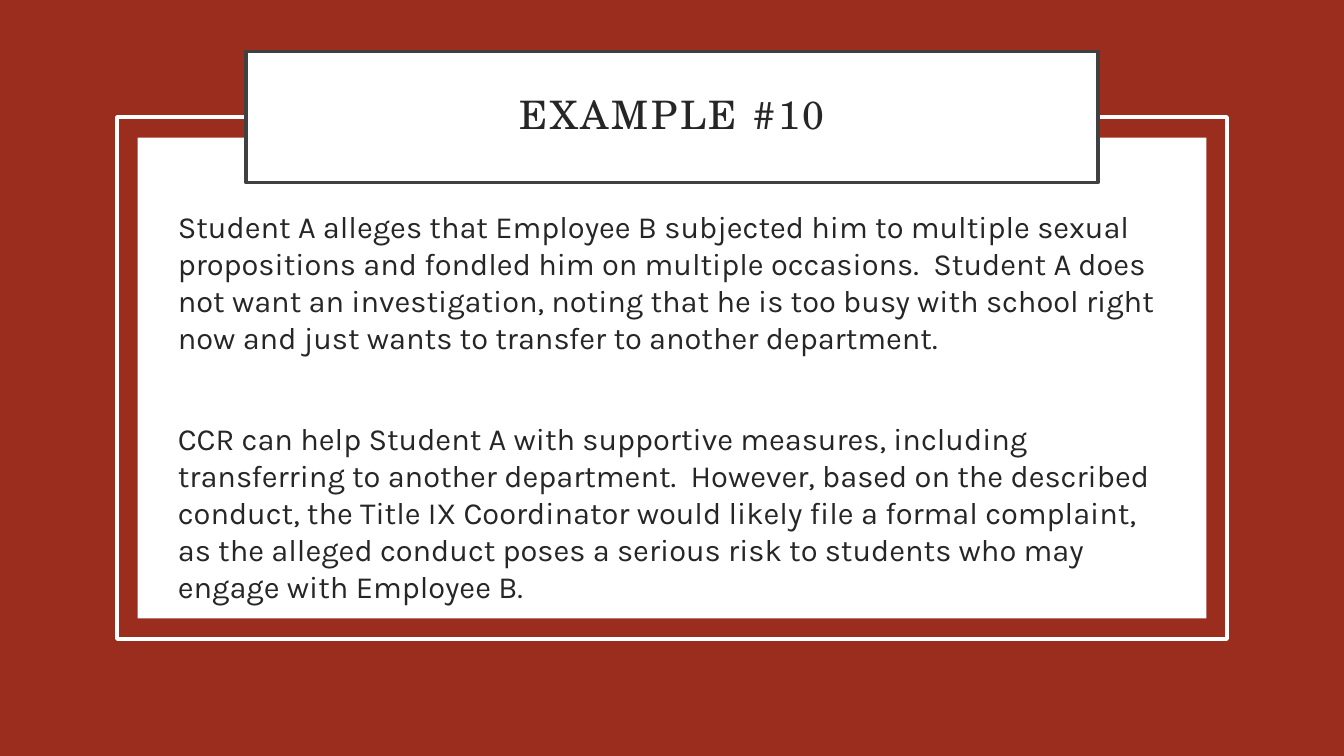
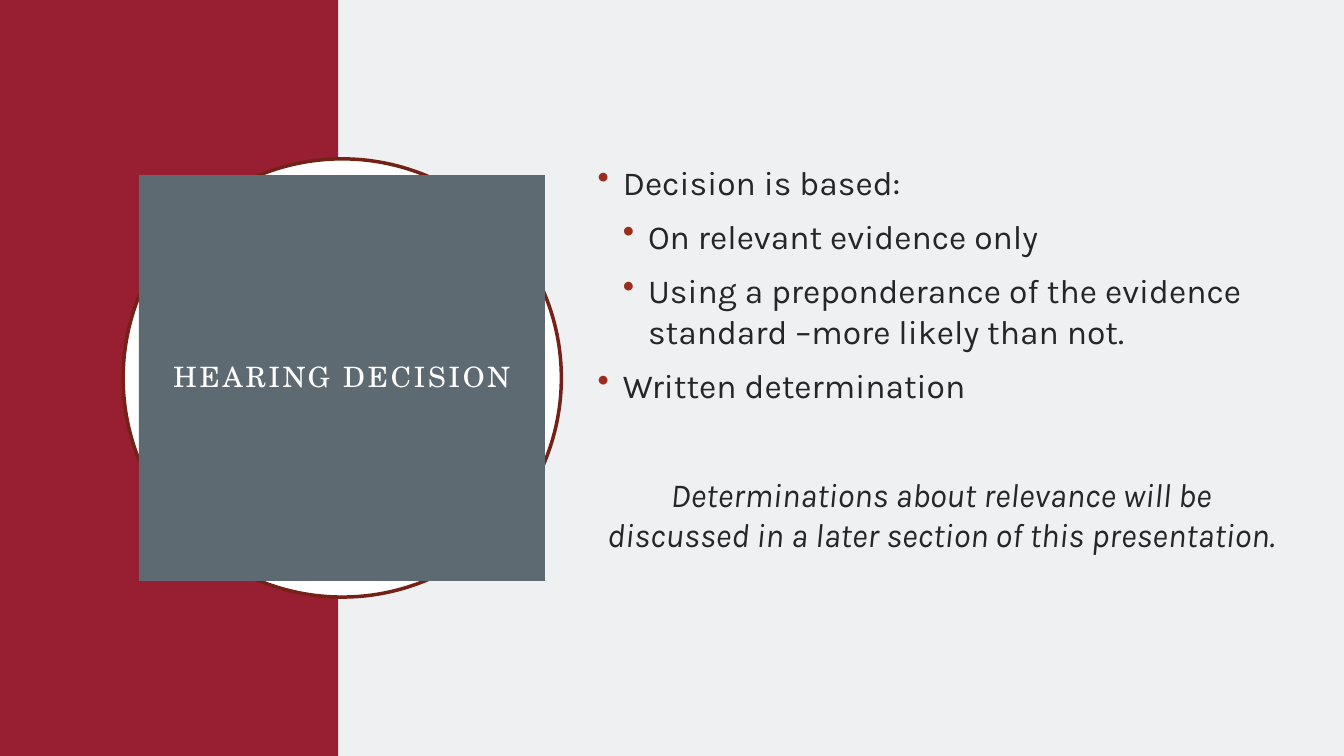
"""Build two training slides: a worked example and the hearing decision."""
from pptx import Presentation
from pptx.dml.color import RGBColor
from pptx.enum.shapes import MSO_SHAPE
from pptx.enum.text import MSO_ANCHOR, PP_ALIGN
from pptx.oxml import parse_xml
from pptx.oxml.ns import nsdecls
from pptx.util import Pt

BRICK, CRIMSON, MAROON = "9B2D1F", "981E32", "742217"
WHITE, PALE, SLATE, INK, CHARCOAL = "FFFFFF", "EFF0F1", "5E6A71", "262626", "404040"
TITLE_STYLE = dict(font="TeX Gyre Schola", align=PP_ALIGN.CENTER, line_spacing=0.9, tracking=2)


def add_panel(slide, left, top, width, height, fill=None, line=None, kind=MSO_SHAPE.RECTANGLE):
    panel = slide.shapes.add_shape(kind, Pt(left), Pt(top), Pt(width), Pt(height))
    panel.shadow.inherit = False
    if fill:
        panel.fill.solid()
        panel.fill.fore_color.rgb = RGBColor.from_string(fill)
    else:
        panel.fill.background()
    if line:
        panel.line.color.rgb = RGBColor.from_string(line)
        panel.line.width = Pt(2.5)
    else:
        panel.line.fill.background()
    return panel


def write(holder, text, size, font="Karla", color=INK, align=PP_ALIGN.LEFT, before=0,
          line_spacing=None, tracking=0, italic=False, bullet_level=None, inset=None,
          anchor=MSO_ANCHOR.TOP):
    frame = holder.text_frame
    frame.word_wrap = True
    frame.vertical_anchor = anchor
    if inset is not None:
        frame.margin_left = frame.margin_right = Pt(inset)
        frame.margin_top = frame.margin_bottom = Pt(inset)
    paragraph = frame.add_paragraph() if frame.text else frame.paragraphs[0]
    paragraph.alignment = align
    paragraph.space_before = Pt(before)
    if line_spacing:
        paragraph.line_spacing = line_spacing
    if bullet_level is not None:
        paragraph.level = bullet_level
        properties = paragraph._p.get_or_add_pPr()
        properties.set("marL", str(Pt(18 * (bullet_level + 1))))
        properties.set("indent", str(-Pt(18)))
        properties.append(parse_xml(
            f'<a:buClr {nsdecls("a")}><a:srgbClr val="{BRICK}"/></a:buClr>'))
        properties.append(parse_xml(f'<a:buChar {nsdecls("a")} char="•"/>'))
    run = paragraph.add_run()
    run.text = text
    run.font.name = font
    run.font.size = Pt(size)
    run.font.italic = italic
    run.font.color.rgb = RGBColor.from_string(color)
    if tracking:
        run._r.get_or_add_rPr().set("spc", str(tracking * 100))


deck = Presentation()
deck.slide_width, deck.slide_height = Pt(960), Pt(540)
example, decision = [deck.slides.add_slide(deck.slide_layouts[6]) for _ in range(2)]
for slide, backdrop in ((example, BRICK), (decision, PALE)):
    slide.background.fill.solid()
    slide.background.fill.fore_color.rgb = RGBColor.from_string(backdrop)

add_panel(example, 98.3, 98.3, 763.4, 343.4, fill=WHITE)
add_panel(example, 83.5, 83.5, 793, 373, line=WHITE)
example_title = add_panel(example, 175.7, 36.7, 608.6, 93.6, fill=WHITE, line=CHARCOAL)
write(example_title, "EXAMPLE #10", 28, inset=14.4, anchor=MSO_ANCHOR.MIDDLE, **TITLE_STYLE)

scenario = example.shapes.add_textbox(Pt(120), Pt(144.7), Pt(720), Pt(226))
for text, before in (
    ("Student A alleges that Employee B subjected him to multiple sexual propositions and "
     "fondled him on multiple occasions.  Student A does not want an investigation, noting "
     "that he is too busy with school right now and just wants to transfer to another "
     "department.", 0),
    ("CCR can help Student A with supportive measures, including transferring to another "
     "department.  However, based on the described conduct, the Title IX Coordinator would "
     "likely file a formal complaint, as the alleged conduct poses a serious risk to students "
     "who may engage with Employee B.", 46),
):
    write(scenario, text, 22, before=before)

add_panel(decision, 0, 0, 241.6, 540, fill=CRIMSON)
add_panel(decision, 88, 113.5, 313, 313, fill=WHITE, line=MAROON, kind=MSO_SHAPE.OVAL)
decision_title = add_panel(decision, 99.25, 125, 290, 290, fill=SLATE)
write(decision_title, "HEARING DECISION", 20, color=WHITE, inset=14.4,
      anchor=MSO_ANCHOR.MIDDLE, **TITLE_STYLE)

basis = decision.shapes.add_textbox(Pt(419.8), Pt(72), Pt(504.7), Pt(395.3))
for text, level, before in (
    ("Decision is based:", 0, 0),
    ("On relevant evidence only", 1, 10),
    ("Using a preponderance of the evidence standard –more likely than not.", 1, 10),
    ("Written determination", 0, 10),
):
    write(basis, text, 24, bullet_level=level, before=before)
write(basis, "Determinations about relevance will be discussed in a later section of this "
      "presentation.", 24, italic=True, align=PP_ALIGN.CENTER, before=49)
basis.text_frame.margin_top = Pt(43.3)

deck.save("out.pptx")
